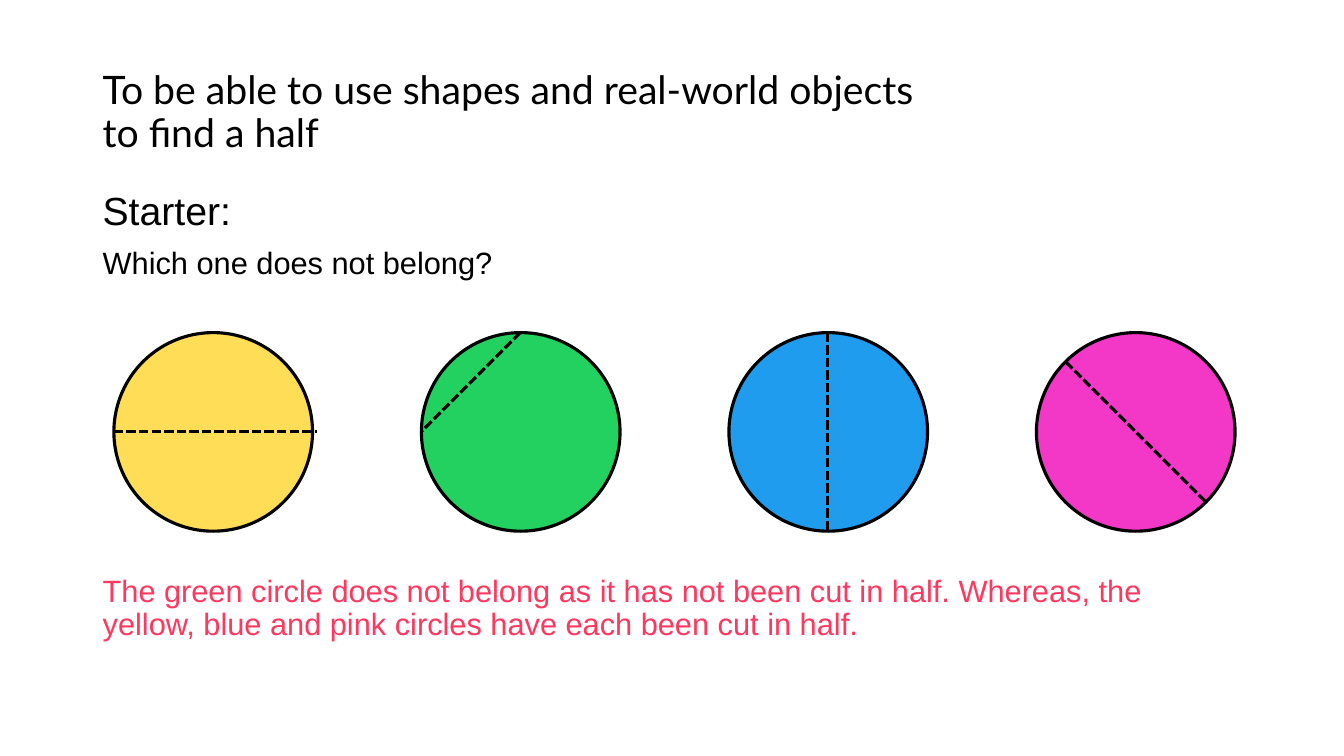
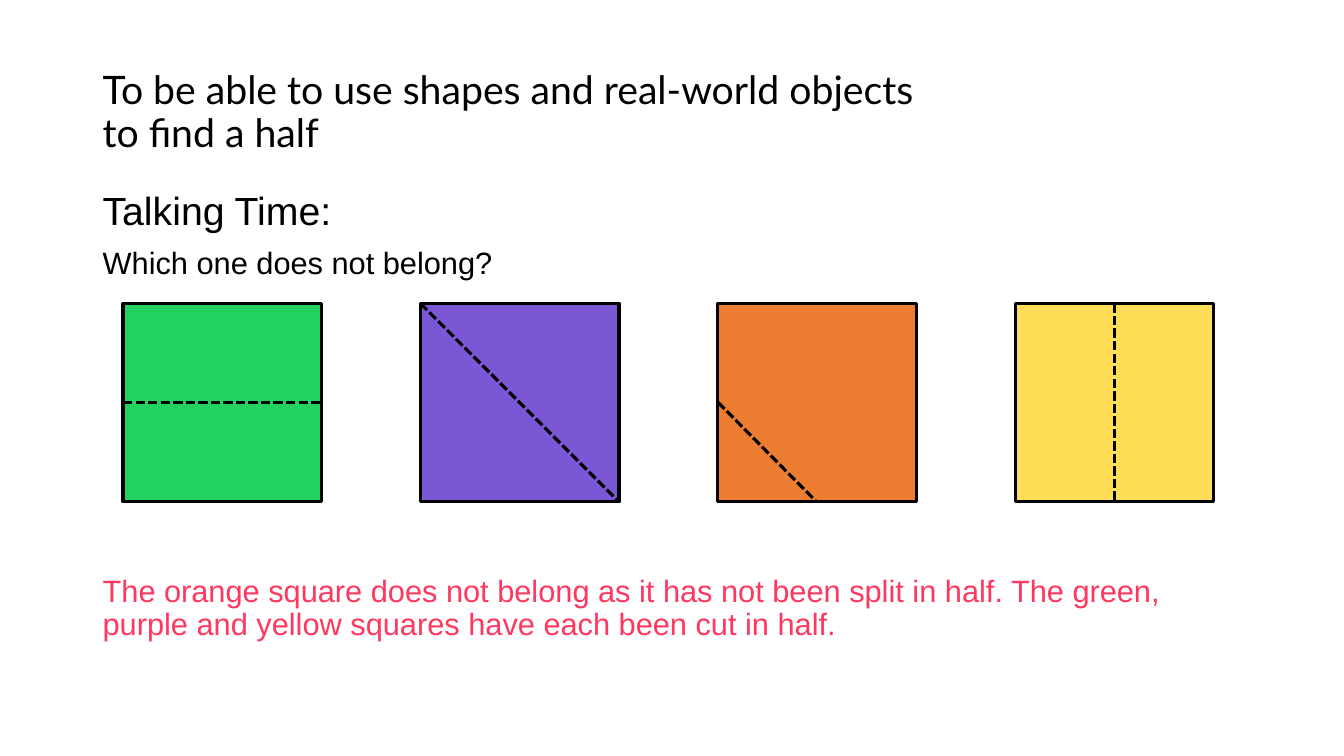
import dataclasses
import pptx
import pptx.dml.color
import pptx.enum.dml
import pptx.enum.shapes
import pptx.enum.text
import pptx.oxml.ns
import pptx.util
from lxml import etree

PX = 9144
SIDE = 197
OVAL = pptx.enum.shapes.MSO_SHAPE.OVAL
SQUARE = pptx.enum.shapes.MSO_SHAPE.RECTANGLE


@dataclasses.dataclass(frozen=True)
class Theme:
    """Colours, fonts and type sizes shared by the slides."""
    ink: str = "000000"
    answer: str = "FF3860"
    paper: str = "FFFFFF"
    yellow: str = "FFDD57"
    green: str = "23D160"
    blue: str = "209CEE"
    pink: str = "F337C7"
    purple: str = "7957D5"
    orange: str = "ED7D31"
    title_font: str = "Lato"
    body_font: str = "Arial"
    large: int = 28
    normal: int = 22
    outline: float = 2.25


class Deck:
    """Draws lesson elements on the current slide."""

    def __init__(self, theme):
        self.theme = theme
        self.prs = pptx.Presentation()
        self.prs.slide_width = 1333 * PX
        self.prs.slide_height = 750 * PX
        self.s = None

    def slide(self):
        """Start a blank slide with its white panel."""
        self.s = self.prs.slides.add_slide(self.prs.slide_layouts[6])
        self.shape(SQUARE, 17, 15, 1300, 722, self.theme.paper, self.theme.paper, 1)

    def stroke(self, line, color, width):
        """Set the colour and width of a line."""
        line.color.rgb = pptx.dml.color.RGBColor.from_string(color)
        line.width = pptx.util.Pt(width)

    def shape(self, kind, x, y, w, h, fill, line, width):
        """Add a filled and outlined shape."""
        sp = self.s.shapes.add_shape(kind, x * PX, y * PX, w * PX, h * PX)
        sp.shadow.inherit = False
        sp.fill.solid()
        sp.fill.fore_color.rgb = pptx.dml.color.RGBColor.from_string(fill)
        self.stroke(sp.line, line, width)

    def cut(self, x1, y1, x2, y2):
        """Add a dashed cutting line."""
        c = self.s.shapes.add_connector(
            pptx.enum.shapes.MSO_CONNECTOR.STRAIGHT, x1 * PX, y1 * PX, x2 * PX, y2 * PX)
        self.stroke(c.line, self.theme.ink, self.theme.outline)
        c.line.dash_style = pptx.enum.dml.MSO_LINE.SQUARE_DOT
        etree.SubElement(c._element.spPr, pptx.oxml.ns.qn("a:effectLst"))

    def text(self, x, y, w, h, paragraphs, font, color, middle=False):
        """Add a wrapped text box from (text, size) paragraphs."""
        tf = self.s.shapes.add_textbox(x * PX, y * PX, w * PX, h * PX).text_frame
        tf.word_wrap = True
        if middle:
            tf.vertical_anchor = pptx.enum.text.MSO_ANCHOR.MIDDLE
        for i, (words, size) in enumerate(paragraphs):
            p = tf.add_paragraph() if i else tf.paragraphs[0]
            for j, part in enumerate(words.splitlines()):
                if j:
                    p.add_line_break()
                p.add_run().text = part
            p.line_spacing = 0.9
            p.space_before = pptx.util.Pt(10 if i else 0)
            p.font.name = font
            p.font.size = pptx.util.Pt(size)
            p.font.color.rgb = pptx.dml.color.RGBColor.from_string(color)

    def question(self, heading, answer, kind, left, top, pitch, pieces):
        """Add a slide with a row of cut shapes, a question and its answer."""
        t = self.theme
        self.slide()
        self.text(92, 40, 960, 145, [(TITLE, t.large)], t.title_font, t.ink, True)
        self.text(92, 185, 1150, 110, [(heading, t.large), (PROMPT, t.normal)],
                  t.body_font, t.ink)
        self.text(92, 566, 1150, 95, [(answer, t.normal)], t.body_font, t.answer)
        for i, (fill, (x1, y1, x2, y2)) in enumerate(pieces):
            x = left + i * pitch
            self.shape(kind, x, top, SIDE, SIDE, fill, t.ink, t.outline)
            self.cut(x + x1, top + y1, x + x2, top + y2)


TITLE = """To be able to use shapes and real-world objects
to find a half"""
PROMPT = "Which one does not belong?"
MID = SIDE // 2
ACROSS = (0, MID, SIDE, MID)
DOWN = (MID, 0, MID, SIDE)


def main():
    """Build and save the lesson."""
    t = Theme()
    deck = Deck(t)
    deck.question(
        "Starter:",
        "The green circle does not belong as it has not been cut in half. "
        "Whereas, the yellow, blue and pink circles have each been cut in half.",
        OVAL, 113, 330, 305,
        [(t.yellow, (0, MID, SIDE + 4, MID)), (t.green, (MID, 0, 0, MID)),
         (t.blue, DOWN), (t.pink, (29, 29, SIDE - 29, SIDE - 29))])
    deck.question(
        "Talking Time:",
        "The orange square does not belong as it has not been split in half. "
        "The green, purple and yellow squares have each been cut in half.",
        SQUARE, 122, 301, 295,
        [(t.green, ACROSS), (t.purple, (0, 0, SIDE, SIDE)),
         (t.orange, (0, MID, MID, SIDE)), (t.yellow, DOWN)])
    deck.prs.save("out.pptx")


if __name__ == "__main__":
    main()
